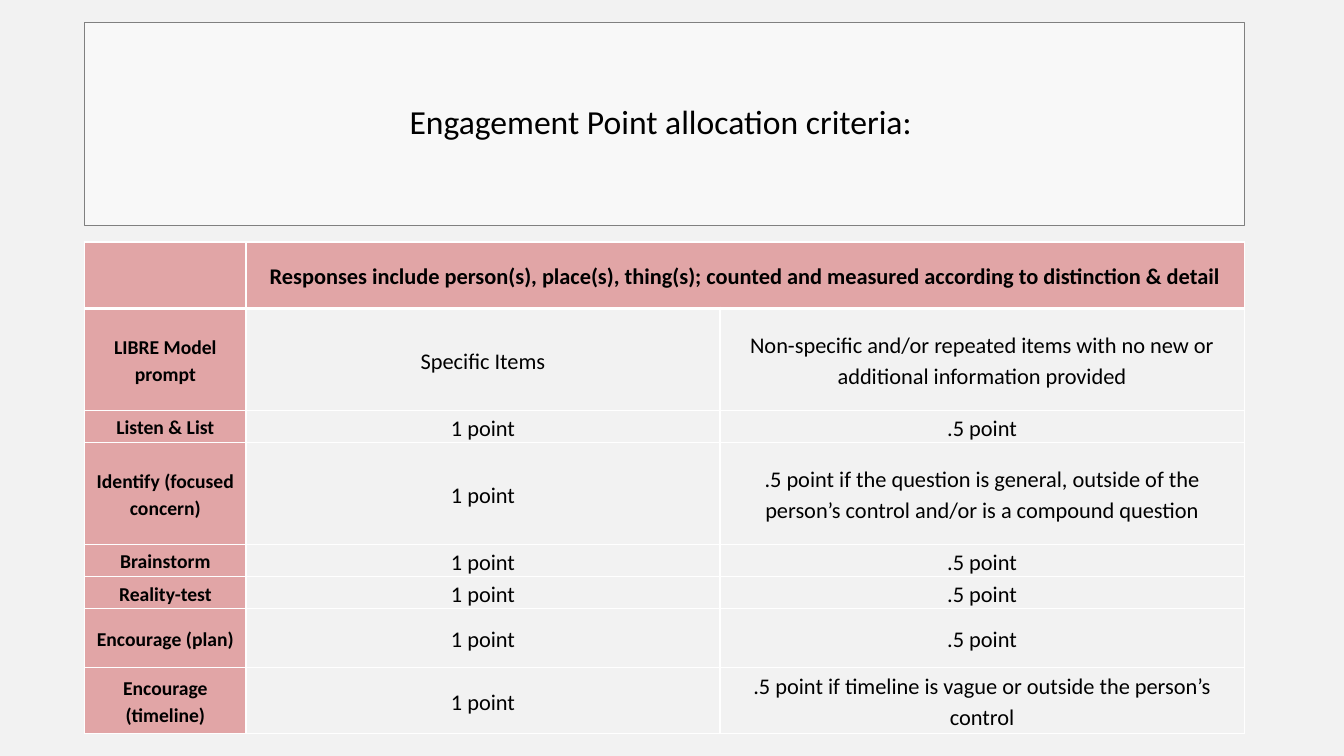
from dataclasses import dataclass

from lxml import etree
from pptx import Presentation
from pptx import util as u
from pptx.dml.color import RGBColor
from pptx.enum import text
from pptx.oxml import ns


@dataclass(frozen=True)
class Theme:
    font: str = "Calibri"
    ink: str = "000000"
    background: str = "F2F2F2"
    panel: str = "FFFFFF"
    panel_line: str = "808080"
    accent: str = "D87C7E"
    rule: str = "FFFFFF"
    title_size: int = 24
    body_size: int = 16
    label_size: int = 14
    panel_opacity: int = 50
    cell_opacity: int = 65
    thin: int = 1
    thick: int = 3


THEME = Theme()
LEFT, WIDTH = 0.84, 11.5
TITLE_TOP, TITLE_HEIGHT = 0.22, 2.02
TABLE_TOP = 2.4
COLUMNS = (1.6, 4.7, 5.2)
HEADING = ("Responses include person(s), place(s), thing(s); "
           "counted and measured according to distinction & detail")
FULL, HALF = "1 point", ".5 point"
# Row height, prompt, specific items, non-specific items
CRITERIA = (
    (0.66, "", HEADING, ""),
    (1.01, "LIBRE Model prompt", "Specific Items",
     "Non-specific and/or repeated items with no new or additional information provided"),
    (0.32, "Listen & List", FULL, HALF),
    (1.01, "Identify (focused concern)", FULL,
     ".5 point if the question is general, outside of the person’s control "
     "and/or is a compound question"),
    (0.32, "Brainstorm", FULL, HALF),
    (0.32, "Reality-test", FULL, HALF),
    (0.58, "Encourage (plan)", FULL, HALF),
    (0.66, "Encourage (timeline)", FULL,
     ".5 point if timeline is vague or outside the person’s control"),
)


def fill_solid(fill, color, opacity, owner):
    """Fill with a colour at an opacity in percent; owner holds the fill's XML."""
    fill.solid()
    fill.fore_color.rgb = RGBColor.from_string(color)
    tint = owner.find(ns.qn("a:solidFill"))[0]
    etree.SubElement(tint, ns.qn("a:alpha"), val=str(opacity * 1000))


def write_centred(frame, words, size, bold, spacing):
    paragraph = frame.paragraphs[0]
    paragraph.alignment = text.PP_ALIGN.CENTER
    paragraph.line_spacing = spacing
    run = paragraph.add_run()
    run.text = words
    run.font.name = THEME.font
    run.font.size = u.Pt(size)
    run.font.bold = bold
    run.font.color.rgb = RGBColor.from_string(THEME.ink)
    return paragraph


def rule_cell(cell, top, bottom):
    """Draw the four borders, with top and bottom widths in points."""
    widths = {"L": THEME.thin, "R": THEME.thin, "T": top, "B": bottom}
    properties = cell._tc.get_or_add_tcPr()
    for side, width in widths.items():
        border = etree.SubElement(properties, ns.qn(f"a:ln{side}"), w=str(u.Pt(width)))
        paint = etree.SubElement(border, ns.qn("a:solidFill"))
        etree.SubElement(paint, ns.qn("a:srgbClr"), val=THEME.rule)


def add_title(slide):
    title = slide.shapes.title
    title.left, title.top = u.Inches(LEFT), u.Inches(TITLE_TOP)
    title.width, title.height = u.Inches(WIDTH), u.Inches(TITLE_HEIGHT)
    fill_solid(title.fill, THEME.panel, THEME.panel_opacity, title._element.spPr)
    title.line.color.rgb = RGBColor.from_string(THEME.panel_line)
    title.line.width = u.Pt(0.75)
    title.text_frame.vertical_anchor = text.MSO_ANCHOR.MIDDLE
    title.text_frame.word_wrap = True
    heading = write_centred(title.text_frame, "Engagement Point allocation criteria: ",
                            THEME.title_size, False, 0.9)
    heading.space_before = u.Pt(10)


def style_cell(cell, row, column, words):
    is_heading, is_label = row == 0, column == 0
    cell.margin_left = cell.margin_right = u.Inches(0.07)
    cell.margin_top = cell.margin_bottom = 0
    cell.vertical_anchor = text.MSO_ANCHOR.MIDDLE
    rule_cell(cell, top=THEME.thick if row == 1 else THEME.thin,
              bottom=THEME.thick if is_heading else THEME.thin)
    color = THEME.accent if is_heading or is_label else THEME.background
    fill_solid(cell.fill, color, THEME.cell_opacity, cell._tc.tcPr)
    if words:
        size = THEME.label_size if is_label else THEME.body_size
        write_centred(cell.text_frame, words, size, is_heading or is_label, 1.15)


def add_criteria(slide):
    total = sum(height for height, *_ in CRITERIA)
    table = slide.shapes.add_table(
        len(CRITERIA), len(COLUMNS), u.Inches(LEFT), u.Inches(TABLE_TOP),
        u.Inches(WIDTH), u.Inches(total)).table
    for column, width in zip(table.columns, COLUMNS):
        column.width = u.Inches(width)
    for row, (height, *entries) in enumerate(CRITERIA):
        table.rows[row].height = u.Inches(height)
        for column, words in enumerate(entries):
            style_cell(table.cell(row, column), row, column, words)
    table.cell(0, 1).merge(table.cell(0, 2))


def main():
    deck = Presentation()
    deck.slide_width, deck.slide_height = u.Inches(13.33), u.Inches(7.5)
    slide = deck.slides.add_slide(deck.slide_layouts[5])
    slide.background.fill.solid()
    slide.background.fill.fore_color.rgb = RGBColor.from_string(THEME.background)
    add_title(slide)
    add_criteria(slide)
    deck.save("out.pptx")


if __name__ == "__main__":
    main()
